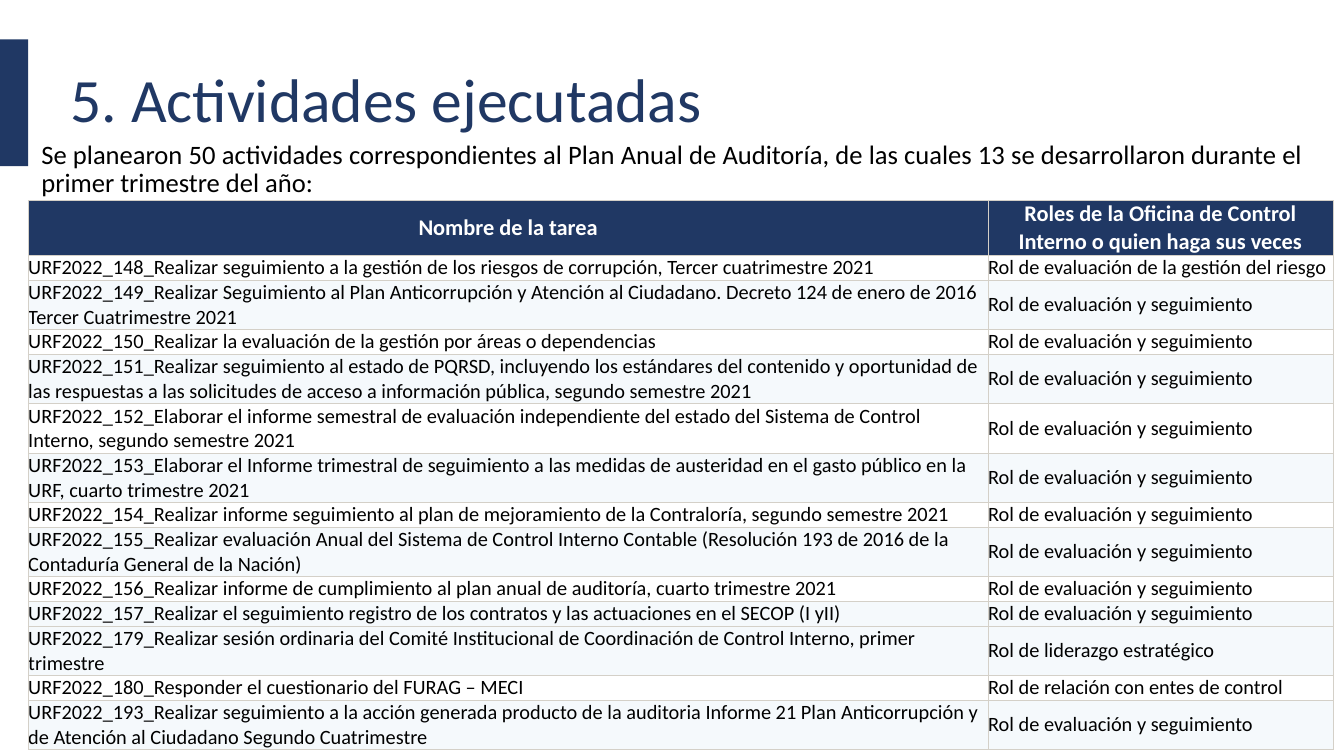
from lxml import etree
from pptx import Presentation
from pptx.dml.color import RGBColor
from pptx.enum.shapes import MSO_SHAPE
from pptx.enum.text import MSO_ANCHOR, MSO_AUTO_SIZE, PP_ALIGN
from pptx.oxml.ns import qn
from pptx.util import Inches, Pt

RECTANGLE = MSO_SHAPE.RECTANGLE
TOP, MIDDLE = MSO_ANCHOR.TOP, MSO_ANCHOR.MIDDLE
LEFT, CENTER, JUSTIFY = PP_ALIGN.LEFT, PP_ALIGN.CENTER, PP_ALIGN.JUSTIFY
NO_AUTOFIT = MSO_AUTO_SIZE.NONE

NAVY, WHITE, PALE, BLACK, BORDER = "203864", "FFFFFF", "F5F9FC", "000000", "D4D0C8"

TITLE = "5. Actividades ejecutadas"
INTRODUCTION = (
    "Se planearon 50 actividades correspondientes al Plan Anual de Auditoría, "
    "de las cuales 13 se desarrollaron durante el primer trimestre del año:"
)
HEADERS = ("Nombre de la tarea", "Roles de la Oficina de Control Interno o quien haga sus veces")
RISK = "Rol de evaluación de la gestión del riesgo"
FOLLOW_UP = "Rol de evaluación y seguimiento"
LEADERSHIP = "Rol de liderazgo estratégico"
RELATION = "Rol de relación con entes de control"

# Task, role, number of text lines, row fill
TASKS = [
    ("URF2022_148_Realizar seguimiento a la gestión de los riesgos de corrupción, "
     "Tercer cuatrimestre 2021", RISK, 1, WHITE),
    ("URF2022_149_Realizar Seguimiento al Plan Anticorrupción y Atención al Ciudadano. "
     "Decreto 124 de enero de 2016 Tercer Cuatrimestre 2021", FOLLOW_UP, 2, PALE),
    ("URF2022_150_Realizar la evaluación de la gestión por áreas o dependencias",
     FOLLOW_UP, 1, WHITE),
    ("URF2022_151_Realizar seguimiento al estado de PQRSD, incluyendo los estándares del "
     "contenido y oportunidad de las respuestas a las solicitudes de acceso a información "
     "pública, segundo semestre 2021", FOLLOW_UP, 2, PALE),
    ("URF2022_152_Elaborar el informe semestral de evaluación independiente del estado del "
     "Sistema de Control Interno, segundo semestre 2021", FOLLOW_UP, 2, WHITE),
    ("URF2022_153_Elaborar el Informe trimestral de seguimiento a las medidas de austeridad "
     "en el gasto público en la URF, cuarto trimestre 2021", FOLLOW_UP, 2, PALE),
    ("URF2022_154_Realizar informe seguimiento al plan de mejoramiento de la Contraloría, "
     "segundo semestre 2021", FOLLOW_UP, 1, WHITE),
    ("URF2022_155_Realizar evaluación Anual del Sistema de Control Interno Contable "
     "(Resolución 193 de 2016 de la Contaduría General de la Nación)", FOLLOW_UP, 2, PALE),
    ("URF2022_156_Realizar informe de cumplimiento al plan anual de auditoría, "
     "cuarto trimestre 2021", FOLLOW_UP, 1, WHITE),
    ("URF2022_157_Realizar el seguimiento registro de los contratos y las actuaciones "
     "en el SECOP (I yII)", FOLLOW_UP, 1, PALE),
    ("URF2022_179_Realizar sesión ordinaria del Comité Institucional de Coordinación de "
     "Control Interno, primer trimestre", LEADERSHIP, 2, PALE),
    ("URF2022_180_Responder el cuestionario del FURAG – MECI", RELATION, 1, WHITE),
    ("URF2022_193_Realizar seguimiento a la acción generada producto de la auditoria "
     "Informe 21 Plan Anticorrupción y de Atención al Ciudadano Segundo Cuatrimestre",
     FOLLOW_UP, 2, PALE),
]
COLUMN_WIDTHS = (9.52, 3.42)
HEADER_HEIGHT, LINE_HEIGHT = 0.54, 0.24


def rgb(value):
    return RGBColor.from_string(value)


def set_attributes(target, values):
    for name, value in values.items():
        setattr(target, name, value)


class SlideBuilder:
    def __init__(self, slide, font_name):
        self.slide = slide
        self.font_name = font_name

    def add_text(self, frame, text, size, color, bold=False, **paragraph_format):
        paragraph = frame.paragraphs[0]
        paragraph.text = text
        set_attributes(paragraph, paragraph_format)
        font = paragraph.runs[0].font
        set_attributes(font, {"name": self.font_name, "size": Pt(size), "bold": bold})
        font.color.rgb = rgb(color)

    def placeholder(self, shape, box, text, size, color, anchor, alignment):
        """Place a template placeholder and fill it with one unbulleted paragraph."""
        set_attributes(shape, dict(zip(("left", "top", "width", "height"), map(Inches, box))))
        frame = shape.text_frame
        set_attributes(frame, {"word_wrap": True, "auto_size": NO_AUTOFIT,
                               "vertical_anchor": anchor})
        frame.paragraphs[0].space_before = Pt(0)
        properties = frame.paragraphs[0]._p.get_or_add_pPr()
        properties.set("marL", "0")
        properties.set("indent", "0")
        etree.SubElement(properties, qn("a:buNone"))
        self.add_text(frame, text, size, color, alignment=alignment, line_spacing=0.9)

    def rectangle(self, box, color):
        shape = self.slide.shapes.add_shape(RECTANGLE, *map(Inches, box))
        shape.shadow.inherit = False
        shape.fill.solid()
        shape.fill.fore_color.rgb = rgb(color)
        shape.line.fill.background()

    def border(self, cell):
        properties = cell._tc.get_or_add_tcPr()
        for position, side in enumerate(("a:lnL", "a:lnR", "a:lnT", "a:lnB")):
            line = etree.Element(qn(side), w=str(Pt(0.5)))
            fill = etree.SubElement(line, qn("a:solidFill"))
            etree.SubElement(fill, qn("a:srgbClr"), val=BORDER)
            properties.insert(position, line)

    def cell(self, cell, text, fill, **text_style):
        set_attributes(cell, {"margin_left": 0, "margin_right": 0, "margin_top": 0,
                              "margin_bottom": 0, "vertical_anchor": MIDDLE})
        cell.fill.solid()
        cell.fill.fore_color.rgb = rgb(fill)
        self.border(cell)
        self.add_text(cell.text_frame, text, **text_style)

    def task_table(self, left, top):
        heights = [HEADER_HEIGHT] + [lines * LINE_HEIGHT for _, _, lines, _ in TASKS]
        table = self.slide.shapes.add_table(
            len(heights), len(COLUMN_WIDTHS), Inches(left), Inches(top),
            Inches(sum(COLUMN_WIDTHS)), Inches(sum(heights))).table
        for column, width in zip(table.columns, COLUMN_WIDTHS):
            column.width = Inches(width)
        for row, height in zip(table.rows, heights):
            row.height = Inches(height)
        for cell, header in zip(table.rows[0].cells, HEADERS):
            self.cell(cell, header, NAVY, size=16, color=WHITE, bold=True, alignment=CENTER)
        for row, (task, role, _, fill) in enumerate(TASKS, 1):
            for cell, text in zip(table.rows[row].cells, (task, role)):
                self.cell(cell, text, fill, size=14.5, color=BLACK, alignment=LEFT)


def main():
    presentation = Presentation()
    set_attributes(presentation, {"slide_width": Inches(13.33), "slide_height": Inches(7.5)})
    slide = presentation.slides.add_slide(presentation.slide_layouts[1])
    builder = SlideBuilder(slide, "Calibri")
    builder.placeholder(slide.shapes.title, (0.6, 0.69, 8.14, 0.66), TITLE, 44, NAVY,
                        MIDDLE, LEFT)
    builder.placeholder(slide.placeholders[1], (0.31, 1.35, 12.71, 0.73), INTRODUCTION, 19,
                        BLACK, TOP, JUSTIFY)
    builder.rectangle((0, 0.39, 0.28, 1.26), NAVY)
    builder.task_table(0.28, 1.99)
    presentation.save("out.pptx")


if __name__ == "__main__":
    main()
